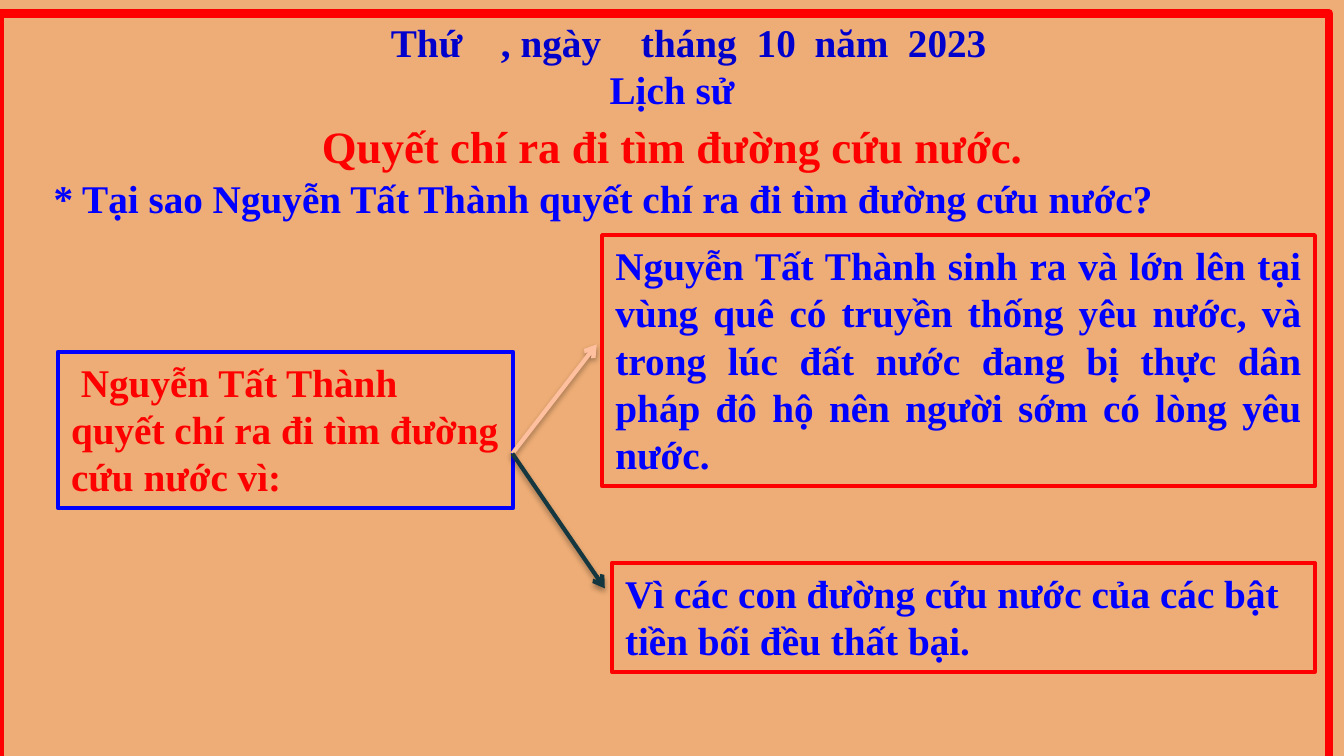
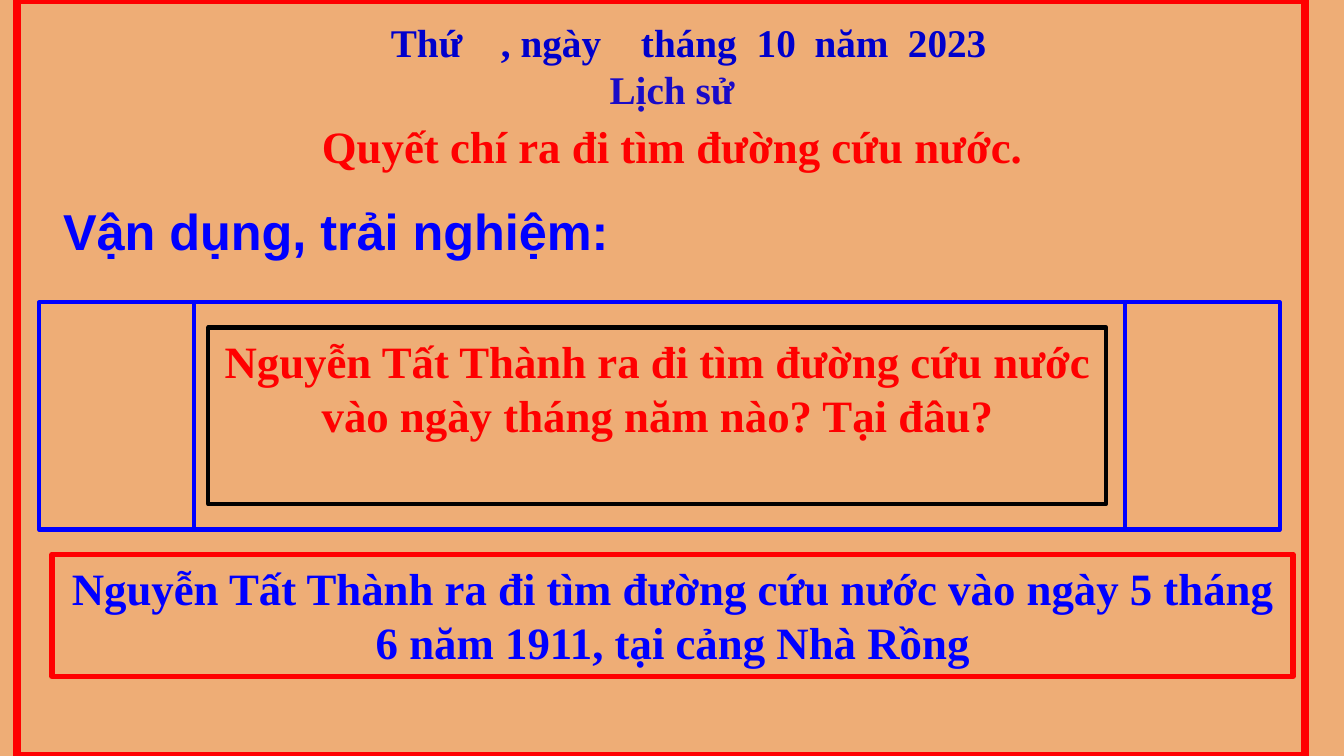
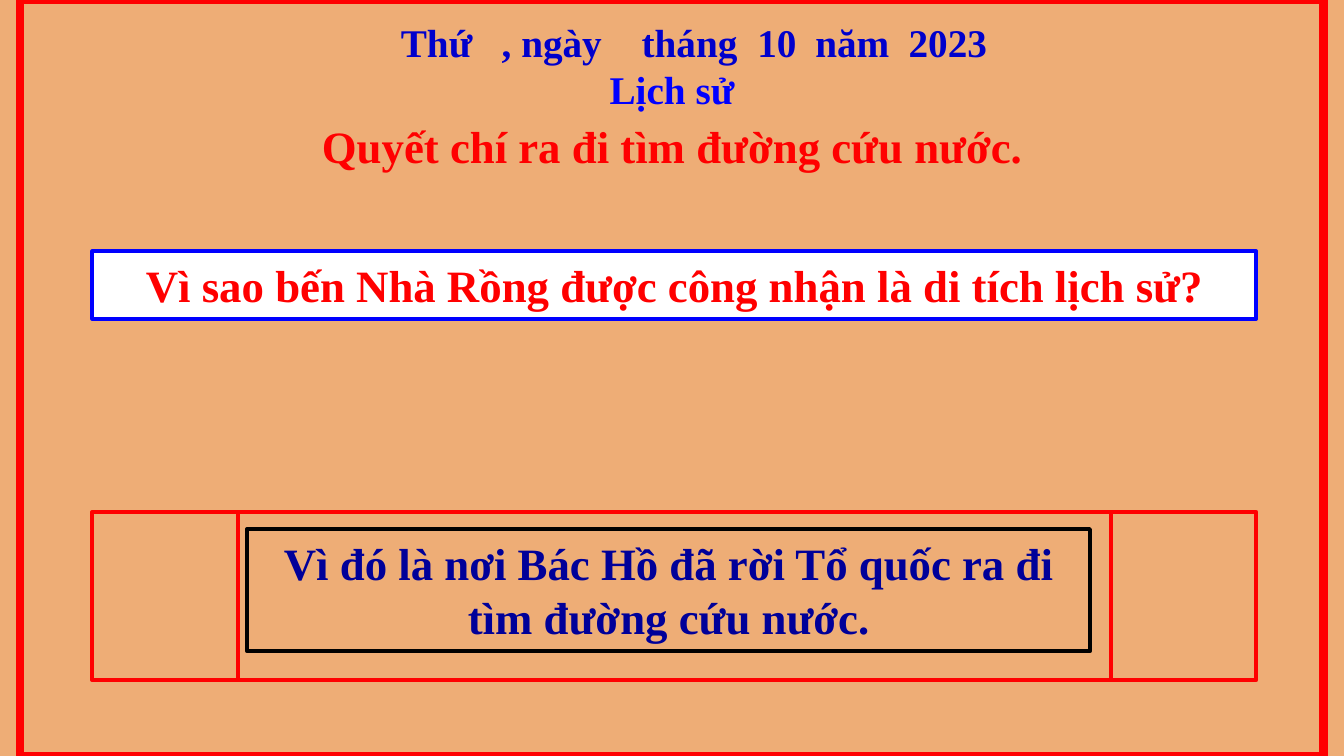
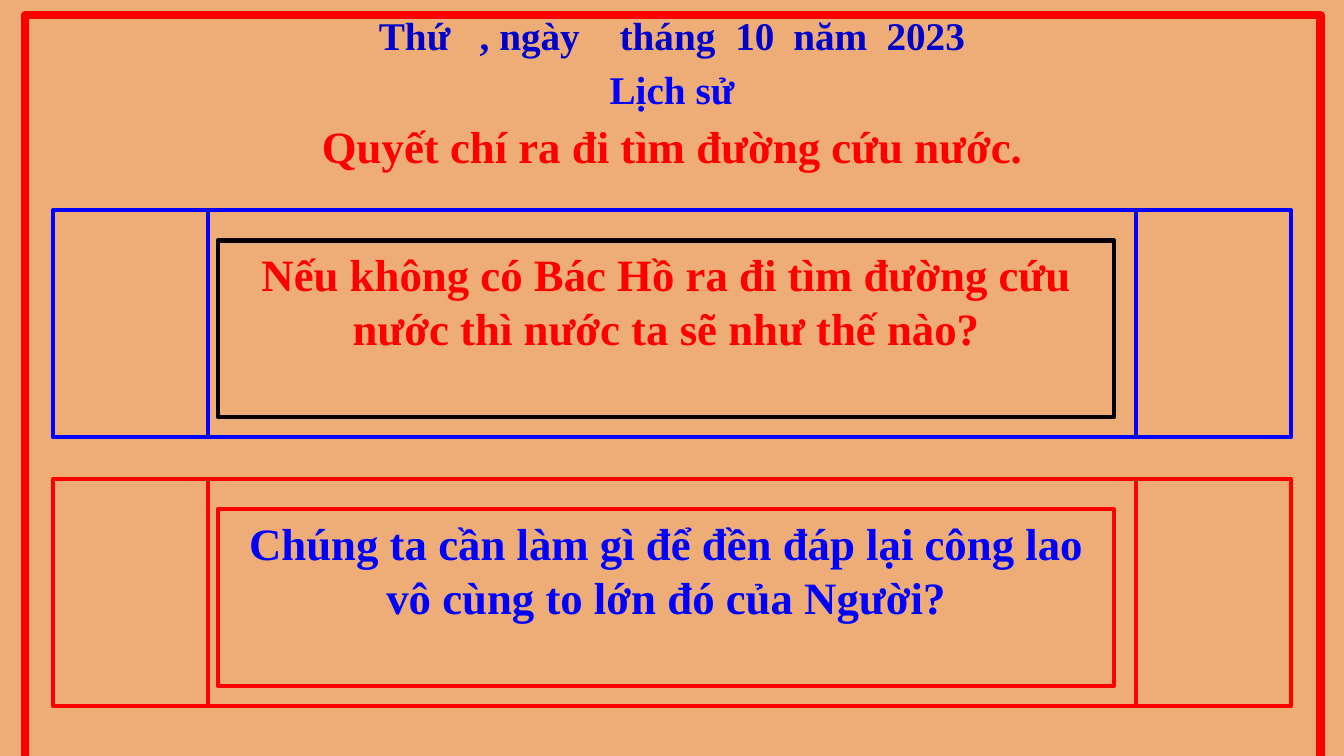
from lxml.etree import SubElement
from pptx import Presentation
from pptx.dml.color import RGBColor
from pptx.enum.shapes import MSO_CONNECTOR, MSO_SHAPE
from pptx.enum.text import MSO_ANCHOR, MSO_AUTO_SIZE, PP_ALIGN
from pptx.oxml.ns import qn
from pptx.util import Pt

SERIF = "Times New Roman"
SAND, RED, BLUE, BLACK = "EEAD76", "FF0000", "0000FF", "000000"
DATE_BLUE, NAVY, WHITE = "0000CC", "000099", "FFFFFF"
BODY, LARGE = 21, 24
SIDE_INSET, TOP_INSET = 7.2, 3.6
DATE_TOP, DATE_STEPS = 7.2, (0, 75, 62, 31, 50)


def rgb(value):
    return RGBColor.from_string(value)


def apply_format(obj, **values):
    for name, value in values.items():
        setattr(obj, name, value)


def place(sp, box):
    apply_format(sp, **dict(zip(("left", "top", "width", "height"), map(Pt, box))))


def write(sp, text, color, size=BODY, align=PP_ALIGN.LEFT, font=SERIF,
          wrap=True, side=SIDE_INSET, top=TOP_INSET, indent=0, tabs=()):
    tf = sp.text_frame
    apply_format(tf, word_wrap=wrap, auto_size=MSO_AUTO_SIZE.NONE,
                 vertical_anchor=MSO_ANCHOR.TOP,
                 margin_left=Pt(side), margin_right=Pt(min(side, SIDE_INSET)),
                 margin_top=Pt(top), margin_bottom=Pt(top))
    p = tf.paragraphs[0]
    p.text = text
    p.alignment = align
    pPr = p._p.get_or_add_pPr()
    if indent:
        pPr.set("indent", str(Pt(indent)))
    if tabs:
        tab_list = SubElement(pPr, qn("a:tabLst"))
        for pos in tabs:
            SubElement(tab_list, qn("a:tab"), pos=str(Pt(pos)), algn="l")
    apply_format(p.runs[0].font, name=font, size=Pt(size), bold=True)
    p.runs[0].font.color.rgb = rgb(color)


def add_text(s, box, text, color, **style):
    sp = s.shapes.add_textbox(*map(Pt, box))
    write(sp, text, color, **style)


def add_box(shapes, box, line, weight=2.25, kind=MSO_SHAPE.RECTANGLE, fill=None):
    sp = shapes.add_shape(kind, *map(Pt, box))
    sp.shadow.inherit = False
    if fill:
        sp.fill.solid()
        sp.fill.fore_color.rgb = rgb(fill)
    else:
        sp.fill.background()
    sp.line.color.rgb = rgb(line)
    sp.line.width = Pt(weight)
    return sp


def add_text_box(s, box, line, text, color, weight=2.25, fill=None, **style):
    write(add_box(s.shapes, box, line, weight, fill=fill), text, color, **style)


def add_panel(s, outer, outer_line, inner, inner_line, text, color):
    shapes = s.shapes.add_group_shape().shapes
    add_box(shapes, outer, outer_line, kind=MSO_SHAPE.FLOWCHART_PREDEFINED_PROCESS)
    write(add_box(shapes, inner, inner_line), text, color,
          size=LARGE, align=PP_ALIGN.CENTER)


def add_arrow(s, start, end, color):
    line = s.shapes.add_connector(MSO_CONNECTOR.STRAIGHT, *map(Pt, start + end))
    line.line.color.rgb = rgb(color)
    line.line.width = Pt(2.25)
    SubElement(line.line._get_or_add_ln(), qn("a:tailEnd"), type="arrow")
    effects = SubElement(line._element.spPr, qn("a:effectLst"))
    shadow = SubElement(effects, qn("a:outerShdw"), blurRad=str(Pt(3.1)),
                        dist=str(Pt(1.8)), dir="5400000", rotWithShape="0")
    shade = SubElement(shadow, qn("a:srgbClr"), val=BLACK)
    SubElement(shade, qn("a:alpha"), val="35000")


def add_date(s, left, top, start, first_tab):
    tabs, pos = [], first_tab
    for step in DATE_STEPS:
        pos += step
        tabs.append(pos)
    add_text(s, (left, top, 540, 31), "Thứ\t, ngày\ttháng\t10\tnăm\t2023",
             DATE_BLUE, side=start - left, top=2.7, tabs=tabs)


def add_lesson_slide(prs, frame, date, subject_color=BLUE):
    s = prs.slides.add_slide(prs.slide_layouts[5])
    place(s.shapes.title, (90, 60, 540, 36))
    write(s.shapes.title, "Quyết chí ra đi tìm đường cứu nước.", RED,
          size=LARGE, align=PP_ALIGN.CENTER)
    add_text(s, (90, 32.4, 540, 31), "Lịch sử", subject_color,
             align=PP_ALIGN.CENTER, side=5, top=2.7)
    add_box(s.shapes, frame, RED, 4.5)
    add_date(s, *date)
    return s


def build_reasons(prs):
    s = add_lesson_slide(prs, (0, 7.2, 712, 405), (99.4, DATE_TOP, 209.4, 59))
    add_text(s, (21.6, 90, 608.4, 32.4),
             "* Tại sao Nguyễn Tất Thành quyết chí ra đi tìm đường cứu nước?", BLUE)
    add_text_box(s, (31, 188.6, 244, 83.5), BLUE,
                 "Nguyễn Tất Thành quyết chí ra đi tìm đường cứu nước vì:",
                 RED, indent=5.25)
    origin = (274.5, 243)
    add_arrow(s, origin, (319.7, 184.5), "FFC09F")
    add_arrow(s, origin, (324, 315.2), "153740")
    add_text_box(s, (327.8, 301.6, 376.6, 58.3), RED,
                 "Vì các con đường cứu nước của các bật tiền bối đều thất bại.", BLUE)
    add_text_box(s, (322.6, 126, 381.8, 134.6), RED,
                 "Nguyễn Tất Thành sinh ra và lớn lên tại vùng quê có truyền thống "
                 "yêu nước, và trong lúc đất nước đang bị thực dân pháp đô hộ nên "
                 "người sớm có lòng yêu nước.", BLUE, align=PP_ALIGN.JUSTIFY)


def build_departure(prs):
    s = add_lesson_slide(prs, (9, 0, 690, 405), (99.4, DATE_TOP, 209.4, 59), "190BC8")
    add_text(s, (99, 103.7, 162, 40.3), "Vận dụng, trải nghiệm:", BLUE,
             size=27, font="Arial", align=PP_ALIGN.CENTER, wrap=False)
    add_panel(s, (21, 162, 664.6, 121.7), BLUE, (111.6, 175.5, 481, 94.5), BLACK,
              "Nguyễn Tất Thành ra đi tìm đường cứu nước vào ngày tháng năm nào? "
              "Tại đâu?", RED)
    add_text_box(s, (28, 297, 664.6, 65.4), RED,
                 "Nguyễn Tất Thành ra đi tìm đường cứu nước vào ngày 5 tháng 6 "
                 "năm 1911, tại cảng Nhà Rồng", BLUE, weight=3,
                 size=LARGE, align=PP_ALIGN.CENTER)


def build_harbour(prs):
    s = add_lesson_slide(prs, (10.6, 0, 698.4, 405), (102.2, DATE_TOP, 214.8, 54))
    add_text_box(s, (49.5, 134.6, 623.5, 36.3), BLUE,
                 "Vì sao bến Nhà Rồng được công nhận là di tích lịch sử?", RED,
                 weight=2, fill=WHITE, size=LARGE, align=PP_ALIGN.CENTER)
    add_panel(s, (49.5, 274.3, 623.5, 90), RED, (132.5, 283.5, 451.4, 65.4), BLACK,
              "Vì đó là nơi Bác Hồ đã rời Tổ quốc ra đi tìm đường cứu nước.", NAVY)


def build_reflection(prs):
    s = add_lesson_slide(prs, (13.5, 8, 694, 405), (90, 3.6, 203, 54))
    questions = (
        (BLUE, BLACK, RED,
         "Nếu không có Bác Hồ ra đi tìm đường cứu nước thì nước ta sẽ như thế nào?"),
        (RED, RED, BLUE,
         "Chúng ta cần làm gì để đền đáp lại công lao vô cùng to lớn đó của Người?"))
    for i, (outer_line, inner_line, color, text) in enumerate(questions):
        top = 112.5 + 144 * i
        add_panel(s, (28.5, top, 663, 121.7), outer_line,
                  (116.7, top + 16.4, 480.2, 94.5), inner_line, text, color)


def main():
    prs = Presentation()
    apply_format(prs, slide_width=Pt(720), slide_height=Pt(405))
    fill = prs.slide_master.background.fill
    fill.solid()
    fill.fore_color.rgb = rgb(SAND)
    for build in (build_reasons, build_departure, build_harbour, build_reflection):
        build(prs)
    prs.save("out.pptx")


if __name__ == "__main__":
    main()
